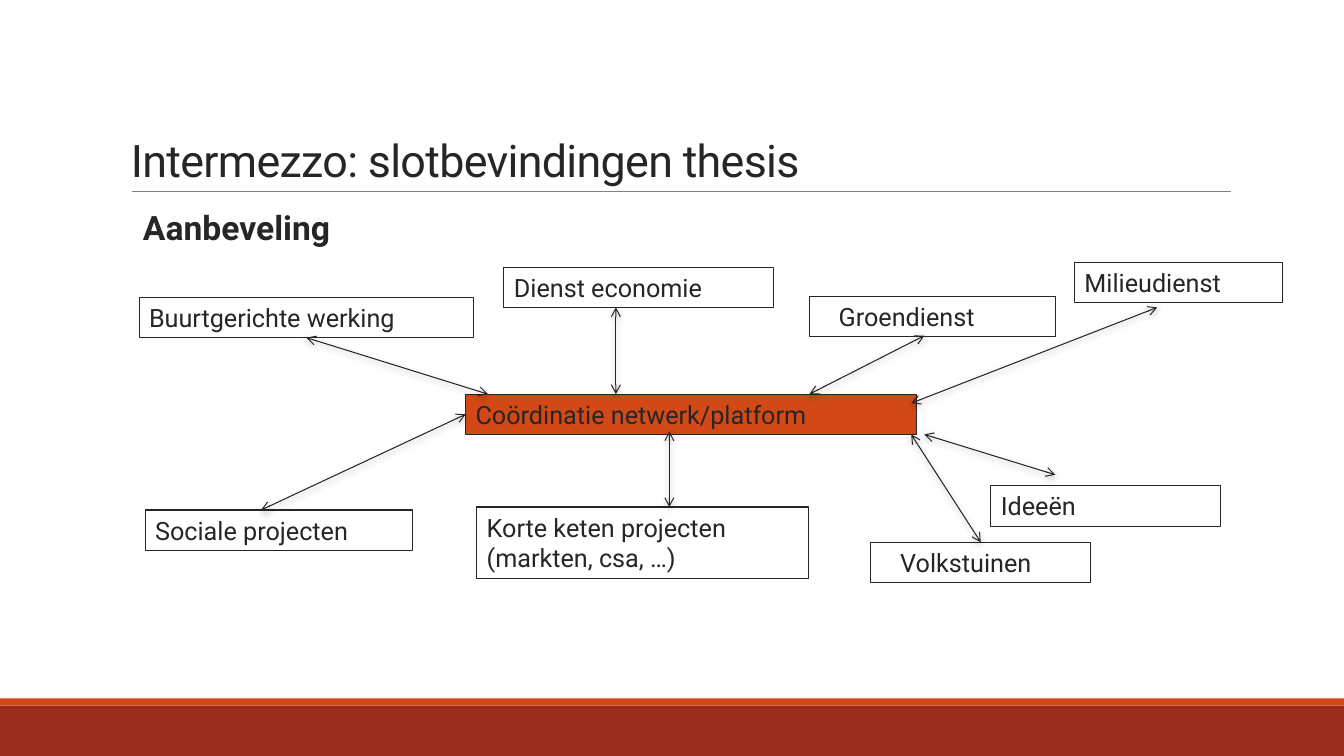
"""Build a slide that links city services and projects to one coordinating platform."""
from dataclasses import dataclass
from typing import Optional

from lxml import etree
from pptx import Presentation, util as u
from pptx.dml.color import RGBColor
from pptx.enum import shapes, text
from pptx.oxml import ns

COLUMNS, ROWS = 133.33, 75
CELL = u.Inches(0.1)


@dataclass(frozen=True)
class Theme:
    font: str = "Roboto"
    ink: str = "262626"
    accent: str = "D34817"
    footer: str = "9B2D1F"
    rule: str = "808080"
    shadow: str = "000000"
    title_size: float = 32
    heading_size: float = 24
    label_size: float = 18
    outline: float = 0.75
    hairline: float = 0.5


@dataclass(frozen=True)
class Label:
    words: str
    column: float
    row: float
    width: float
    height: float = 4
    fill: Optional[str] = None
    indent: float = 1


@dataclass(frozen=True)
class Join:
    words: str
    side: int


@dataclass(frozen=True)
class Arrow:
    start: tuple[float, float]
    end: tuple[float, float]
    start_join: Optional[Join] = None
    end_join: Optional[Join] = None


THEME = Theme()
TOP, LEFT, BOTTOM = 0, 1, 2
HUB = "Coördinatie netwerk/platform"

BANDS = [(70, 5, THEME.footer), (69.3, 0.7, THEME.accent)]

LABELS = [
    Label("Buurtgerichte werking", 13.8, 29.5, 33.2),
    Label("Dienst economie", 50, 26.5, 26.7),
    Label("Groendienst", 80.3, 29.4, 24.4, indent=2.9),
    Label("Milieudienst", 106.6, 26, 20.6),
    Label(HUB, 46.2, 39.1, 44.7, fill=THEME.accent),
    Label("Sociale projecten", 14.4, 50.6, 26.5),
    Label("Korte keten projecten (markten, csa, …)", 47.3, 50.3, 32.9, 7.1),
    Label("Volkstuinen", 86.4, 53.8, 21.8, indent=2.9),
    Label("Ideeën", 98.3, 48.2, 22.8),
]

ARROWS = [
    Arrow((25.9, 50.6), (46.2, 41.1), end_join=Join(HUB, LEFT)),
    Arrow((66.4, 50.3), (66.4, 42.8)),
    Arrow((97.3, 53.8), (90.4, 43.1), start_join=Join("Volkstuinen", TOP)),
    Arrow((30.4, 33.6), (48.4, 39.1), start_join=Join("Buurtgerichte werking", BOTTOM)),
    Arrow((61.1, 39.1), (61.1, 30.5)),
    Arrow((80.3, 39.1), (91.7, 33.3)),
    Arrow((90.4, 40), (114.8, 30.5)),
    Arrow((104.7, 47.1), (91.7, 43.1)),
]


def grid(*cells: float) -> list[u.Emu]:
    """Turn counts of grid cells into lengths."""
    return [u.Emu(round(cell * CELL)) for cell in cells]


def color(code: str) -> RGBColor:
    """Return the colour for a hex code."""
    return RGBColor.from_string(code)


def write(box, words: str, size: float, bold: bool = False):
    """Put left-aligned text in a box and return its paragraph."""
    frame = box.text_frame
    frame.text = words
    frame.word_wrap = True
    para = frame.paragraphs[0]
    para.alignment = text.PP_ALIGN.LEFT
    font = para.runs[0].font
    font.name, font.size, font.bold = THEME.font, u.Pt(size), bold
    font.color.rgb = color(THEME.ink)
    return para


def add_band(page, row: float, height: float, fill: str) -> None:
    """Draw a full-width band."""
    band = page.shapes.add_shape(shapes.MSO_SHAPE.RECTANGLE, *grid(0, row, COLUMNS, height))
    band.shadow.inherit = False
    band.fill.solid()
    band.fill.fore_color.rgb = color(fill)
    band.line.fill.background()


def add_label(page, label: Label):
    """Draw an outlined box with its text."""
    box = page.shapes.add_shape(
        shapes.MSO_SHAPE.RECTANGLE, *grid(label.column, label.row, label.width, label.height))
    box.shadow.inherit = False
    if label.fill:
        box.fill.solid()
        box.fill.fore_color.rgb = color(label.fill)
    else:
        box.fill.background()
    box.line.color.rgb = color(THEME.ink)
    box.line.width = u.Pt(THEME.outline)
    write(box, label.words, THEME.label_size)
    frame = box.text_frame
    frame.vertical_anchor = text.MSO_ANCHOR.TOP
    frame.margin_left = grid(label.indent)[0]
    frame.auto_size = text.MSO_AUTO_SIZE.SHAPE_TO_FIT_TEXT
    return box


def add_line(page, start: tuple[float, float], end: tuple[float, float], ink: str, width: float):
    """Draw a straight line and return it with its empty effect list."""
    line = page.shapes.add_connector(shapes.MSO_CONNECTOR.STRAIGHT, *grid(*start, *end))
    line.line.color.rgb = color(ink)
    line.line.width = u.Pt(width)
    effects = etree.SubElement(line._element.spPr, ns.qn("a:effectLst"))
    return line, effects


def add_arrow(page, arrow: Arrow, boxes: dict) -> None:
    """Draw a two-headed arrow with a soft shadow."""
    line, effects = add_line(page, arrow.start, arrow.end, THEME.ink, THEME.outline)
    outline = line.line._get_or_add_ln()
    for tip in ("a:headEnd", "a:tailEnd"):
        etree.SubElement(outline, ns.qn(tip), type="arrow")
    shadow = etree.SubElement(
        effects, ns.qn("a:outerShdw"), blurRad=str(u.Pt(5)), dist=str(u.Pt(1.8)),
        dir="5400000", rotWithShape="0")
    tint = etree.SubElement(shadow, ns.qn("a:srgbClr"), val=THEME.shadow)
    etree.SubElement(tint, ns.qn("a:alpha"), val="35000")
    if arrow.start_join:
        line.begin_connect(boxes[arrow.start_join.words], arrow.start_join.side)
    if arrow.end_join:
        line.end_connect(boxes[arrow.end_join.words], arrow.end_join.side)


def add_headings(page) -> None:
    """Write the title and the heading below it."""
    title = page.shapes.add_textbox(*grid(12, 3.1, 110, 15.9))
    para = write(title, "Intermezzo: slotbevindingen thesis", THEME.title_size)
    para.line_spacing = 0.85
    para.runs[0]._r.get_or_add_rPr().set("spc", "-50")
    title.text_frame.vertical_anchor = text.MSO_ANCHOR.BOTTOM
    heading = page.shapes.add_textbox(*grid(13.2, 20, 62.9, 5))
    write(heading, "Aanbeveling", THEME.heading_size, bold=True)
    heading.text_frame.auto_size = text.MSO_AUTO_SIZE.SHAPE_TO_FIT_TEXT


def main() -> None:
    """Build and save the deck."""
    deck = Presentation()
    deck.slide_width, deck.slide_height = grid(COLUMNS, ROWS)
    page = deck.slides.add_slide(deck.slide_layouts[6])
    for band in BANDS:
        add_band(page, *band)
    add_line(page, (13.1, 19), (122.1, 19), THEME.rule, THEME.hairline)
    add_headings(page)
    boxes = {label.words: add_label(page, label) for label in LABELS}
    for arrow in ARROWS:
        add_arrow(page, arrow, boxes)
    deck.save("out.pptx")


if __name__ == "__main__":
    main()
